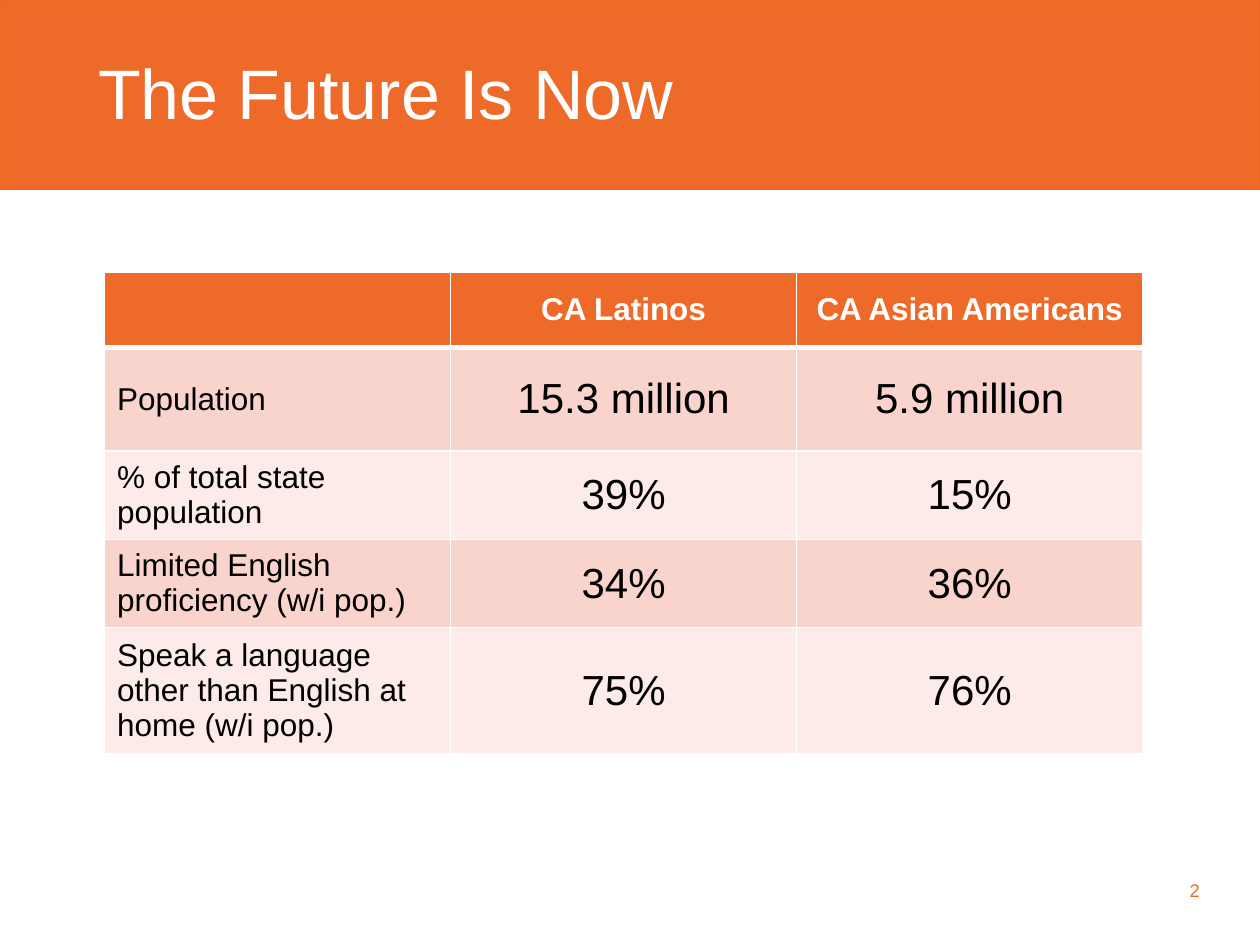
import lxml.etree
import pptx
import pptx.dml.color
import pptx.enum.shapes
import pptx.enum.text
import pptx.oxml.ns
import pptx.util
from pptx.util import Inches

FONT = "Arial"
ORANGE = "EE6A29"
WHITE = "FFFFFF"
BLACK = "000000"
BAND_FILLS = ["F8D4CD", "FCEBE8"]

ALIGN = pptx.enum.text.PP_ALIGN
ANCHOR = pptx.enum.text.MSO_ANCHOR

ROWS = [
    ["", "CA Latinos", "CA Asian Americans"],
    ["Population", "15.3 million", "5.9 million"],
    ["% of total state population", "39%", "15%"],
    ["Limited English proficiency (w/i pop.)", "34%", "36%"],
    ["Speak a language other than English at home (w/i pop.)", "75%", "76%"],
]
ROW_HEIGHTS = [0.6, 0.82, 0.66, 0.66, 0.94]


def color(hex_string):
    return pptx.dml.color.RGBColor.from_string(hex_string)


def fill_solid(target, hex_string):
    target.fill.solid()
    target.fill.fore_color.rgb = color(hex_string)


def write_text(text_frame, text, size, hex_string, align=ALIGN.LEFT, bold=False):
    paragraph = text_frame.paragraphs[0]
    paragraph.text = text
    paragraph.alignment = align
    font = paragraph.font
    font.name = FONT
    font.size = pptx.util.Pt(size)
    font.bold = bold
    font.color.rgb = color(hex_string)


def add_text(slide, box, text, size, hex_string, align=ALIGN.LEFT, anchor=ANCHOR.TOP):
    text_frame = slide.shapes.add_textbox(*box).text_frame
    text_frame.word_wrap = True
    text_frame.vertical_anchor = anchor
    write_text(text_frame, text, size, hex_string, align)


def add_title_band(slide, left, top, width, height):
    band = slide.shapes.add_shape(
        pptx.enum.shapes.MSO_SHAPE.RECTANGLE, left, top, width, height)
    band.shadow.inherit = False
    fill_solid(band, ORANGE)
    band.line.color.rgb = color("EE6623")
    band.line.width = pptx.util.Pt(0.75)
    title_box = (left + Inches(0.68), top + Inches(0.55), Inches(8.67), Inches(0.56))
    add_text(slide, title_box, "The Future Is Now", 40, WHITE, anchor=ANCHOR.BOTTOM)


def set_borders(cell, bottom_width):
    """Draw white borders, 1 pt except at the bottom; call before filling."""
    properties = cell._tc.get_or_add_tcPr()
    for side, width in [("L", 1), ("R", 1), ("T", 1), ("B", bottom_width)]:
        line = lxml.etree.SubElement(
            properties, pptx.oxml.ns.qn("a:ln" + side), w=str(pptx.util.Pt(width)))
        solid = lxml.etree.SubElement(line, pptx.oxml.ns.qn("a:solidFill"))
        lxml.etree.SubElement(solid, pptx.oxml.ns.qn("a:srgbClr"), val=WHITE)


def add_population_table(slide, left, top, width):
    column_count = len(ROWS[0])
    table = slide.shapes.add_table(
        len(ROWS), column_count, left, top, width, Inches(sum(ROW_HEIGHTS))).table
    for column in table.columns:
        column.width = width // column_count
    for row_index, texts in enumerate(ROWS):
        table.rows[row_index].height = Inches(ROW_HEIGHTS[row_index])
        is_header = row_index == 0
        fill = ORANGE if is_header else BAND_FILLS[(row_index - 1) % 2]
        for column_index, text in enumerate(texts):
            is_label = column_index == 0
            cell = table.cell(row_index, column_index)
            set_borders(cell, 3 if is_header else 1)
            fill_solid(cell, fill)
            cell.vertical_anchor = ANCHOR.MIDDLE
            write_text(
                cell.text_frame, text,
                size=18 if is_header or is_label else 24,
                hex_string=WHITE if is_header else BLACK,
                align=ALIGN.LEFT if is_label else ALIGN.CENTER,
                bold=is_header)


def main():
    presentation = pptx.Presentation()
    presentation.slide_width = Inches(10)
    presentation.slide_height = Inches(7.5)
    slide = presentation.slides.add_slide(presentation.slide_layouts[6])
    add_title_band(slide, 0, 0, presentation.slide_width, Inches(1.5))
    add_population_table(slide, Inches(0.83), Inches(2.16), Inches(8.24))
    number_box = (Inches(7.29), Inches(6.93), Inches(2.33), Inches(0.4))
    add_text(slide, number_box, "2", 10.5, ORANGE, ALIGN.RIGHT)
    presentation.save("out.pptx")


if __name__ == "__main__":
    main()
